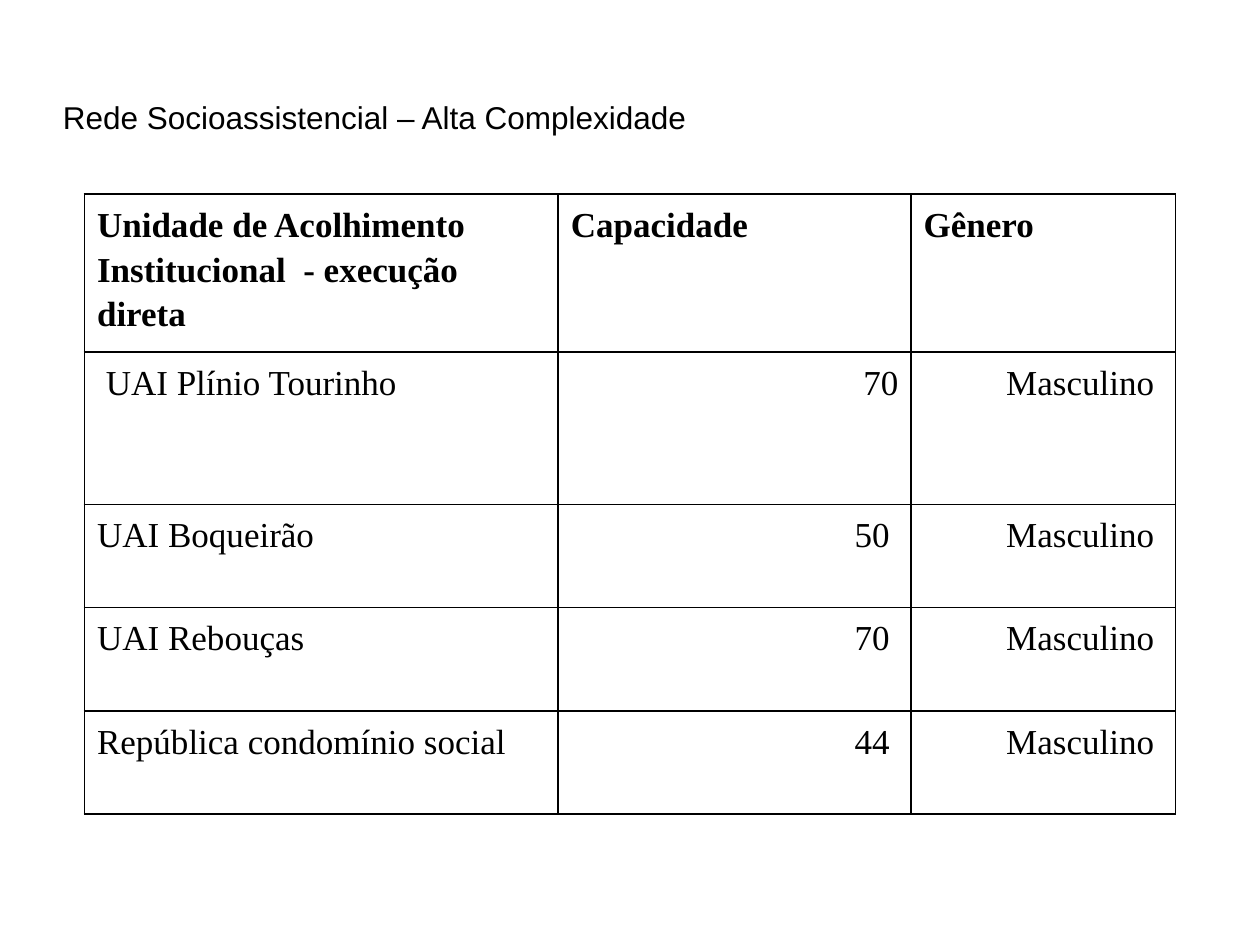
import pptx
import pptx.dml.color
import pptx.enum.text
import pptx.oxml
import pptx.oxml.ns
import pptx.util
from lxml import etree

WIDTH, HEIGHT = pptx.util.Inches(10), pptx.util.Inches(7.5)
ALIGN = pptx.enum.text.PP_ALIGN
COLUMNS = [3.76, 2.8, 2.1]
ROWS = [1.22, 1.21, 0.82, 0.82, 0.82]
HEADER = ["Unidade de Acolhimento Institucional  - execução direta", "Capacidade", "Gênero"]
UNITS = [
    [" UAI Plínio Tourinho ", "70", "Masculino "],
    ["UAI Boqueirão ", "50 ", "Masculino "],
    ["UAI Rebouças ", "70 ", "Masculino "],
    ["República condomínio social ", "44 ", "Masculino "],
]


def rgb(value):
    return pptx.dml.color.RGBColor.from_string(value)


def across(share):
    return int(WIDTH * share)


def down(share):
    return int(HEIGHT * share)


def add_run(p, text, size, font, bold=False):
    r = p.add_run()
    r.text = text
    r.font.size = pptx.util.Pt(size)
    r.font.name = font
    r.font.bold = bold
    r.font.color.rgb = rgb("000000")


def add_title(s, text):
    sp = s.shapes.add_textbox(across(0.05), down(0.04), across(0.9), down(1 / 6))
    tf = sp.text_frame
    tf.word_wrap = True
    tf.vertical_anchor = pptx.enum.text.MSO_ANCHOR.MIDDLE
    tf.margin_left = tf.margin_right = tf.margin_top = tf.margin_bottom = 0
    add_run(tf.paragraphs[0], text, 18, "Arial")


def set_borders(cell, color, width):
    tc_pr = cell._tc.get_or_add_tcPr()
    for i, side in enumerate(["lnL", "lnR", "lnT", "lnB"]):
        ln = pptx.oxml.parse_xml(
            f'<a:{side} {pptx.oxml.ns.nsdecls("a")} w="{pptx.util.Pt(width)}"/>')
        fill = etree.SubElement(ln, pptx.oxml.ns.qn("a:solidFill"))
        etree.SubElement(fill, pptx.oxml.ns.qn("a:srgbClr"), val=color)
        tc_pr.insert(i, ln)


def fill_cell(cell, text, align, bold):
    cell.fill.background()
    set_borders(cell, "000000", 1)
    p = cell.text_frame.paragraphs[0]
    p.alignment = align
    p.line_spacing = 1.15
    add_run(p, text, 20, "Times New Roman", bold)


def add_units_table(s):
    table = s.shapes.add_table(
        len(ROWS), len(COLUMNS), across(0.067), down(0.2055),
        pptx.util.Inches(sum(COLUMNS)), pptx.util.Inches(sum(ROWS))).table
    table.first_row = table.horz_banding = False
    for column, width in zip(table.columns, COLUMNS):
        column.width = pptx.util.Inches(width)
    for row, height in zip(table.rows, ROWS):
        row.height = pptx.util.Inches(height)
    for i, texts in enumerate([HEADER] + UNITS):
        aligns = [ALIGN.JUSTIFY, ALIGN.RIGHT, ALIGN.RIGHT] if i else [ALIGN.LEFT] * 3
        for j, (text, align) in enumerate(zip(texts, aligns)):
            fill_cell(table.cell(i, j), text, align, i == 0)


def main():
    prs = pptx.Presentation()
    prs.slide_width, prs.slide_height = WIDTH, HEIGHT
    s = prs.slides.add_slide(prs.slide_layouts[6])
    s.background.fill.solid()
    s.background.fill.fore_color.rgb = rgb("FFFFFF")
    add_title(s, "Rede Socioassistencial – Alta Complexidade")
    add_units_table(s)
    prs.save("out.pptx")


if __name__ == "__main__":
    main()
